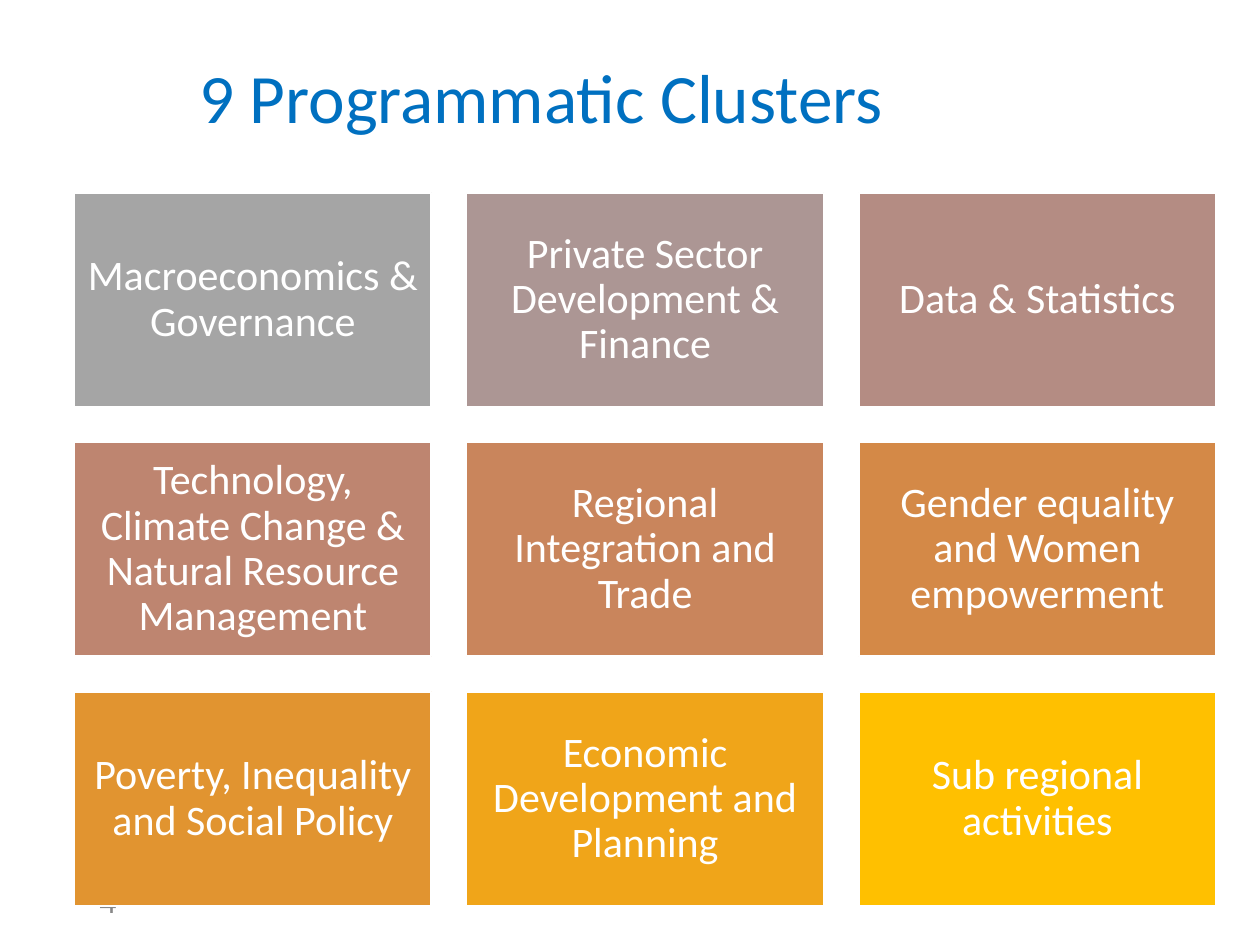
import pptx
import pptx.util
import pptx.dml.color
import pptx.enum.shapes
import pptx.enum.text

Inches, Pt = pptx.util.Inches, pptx.util.Pt
RGBColor = pptx.dml.color.RGBColor
PP_ALIGN, MSO_ANCHOR = pptx.enum.text.PP_ALIGN, pptx.enum.text.MSO_ANCHOR

WHITE = RGBColor(0xFF, 0xFF, 0xFF)
BLUE = RGBColor(0x00, 0x70, 0xC0)
GRAY = RGBColor(0x88, 0x88, 0x88)

CLUSTERS = [
    ("Macroeconomics & Governance", RGBColor(0xA5, 0xA5, 0xA5)),
    ("Private Sector Development & Finance", RGBColor(0xAC, 0x96, 0x94)),
    ("Data & Statistics", RGBColor(0xB4, 0x8C, 0x83)),
    ("Technology, Climate Change & Natural Resource Management",
     RGBColor(0xBE, 0x85, 0x70)),
    ("Regional Integration and Trade", RGBColor(0xC9, 0x85, 0x5C)),
    ("Gender equality and Women empowerment", RGBColor(0xD4, 0x89, 0x47)),
    ("Poverty, Inequality and Social Policy", RGBColor(0xE1, 0x94, 0x30)),
    ("Economic Development and Planning", RGBColor(0xF0, 0xA5, 0x19)),
    ("Sub regional activities", RGBColor(0xFF, 0xC0, 0x00)),
]
COLUMNS = ROWS = 3
GAP = 0.28


def set_text(sp, text, font, size, color, align):
    tf = sp.text_frame
    tf.word_wrap = True
    tf.vertical_anchor = MSO_ANCHOR.MIDDLE
    p = tf.paragraphs[0]
    p.text = text
    p.alignment = align
    p.font.name = font
    p.font.size = Pt(size)
    p.font.color.rgb = color
    return p


def add_label(slide, box, text, font, size, color, align):
    sp = slide.shapes.add_textbox(*map(Inches, box))
    return set_text(sp, text, font, size, color, align)


def add_cluster(slide, box, name, fill):
    sp = slide.shapes.add_shape(
        pptx.enum.shapes.MSO_SHAPE.RECTANGLE, *map(Inches, box))
    sp.shadow.inherit = False
    sp.fill.solid()
    sp.fill.fore_color.rgb = fill
    sp.line.color.rgb = WHITE
    sp.line.width = Pt(1)
    tf = sp.text_frame
    tf.margin_left = tf.margin_right = Inches(0.1)
    tf.margin_top = tf.margin_bottom = Inches(0.1)
    p = set_text(sp, name, "Calibri", 24, WHITE, PP_ALIGN.CENTER)
    p.line_spacing = 0.9


def add_cluster_grid(slide, box):
    """Fill the box row by row with equal rectangles."""
    left, top, width, height = box
    w = (width - (COLUMNS - 1) * GAP) / COLUMNS
    h = (height - (ROWS - 1) * GAP) / ROWS
    for i, (name, fill) in enumerate(CLUSTERS):
        row, col = divmod(i, COLUMNS)
        cell = (left + col * (w + GAP), top + row * (h + GAP), w, h)
        add_cluster(slide, cell, name, fill)


def main():
    prs = pptx.Presentation()
    prs.slide_width, prs.slide_height = Inches(10), Inches(7.5)
    slide = prs.slides.add_slide(prs.slide_layouts[6])
    add_label(slide, (0.69, 6.95, 2.25, 0.4), "4", "Arial", 18, GRAY,
              PP_ALIGN.LEFT)
    add_cluster_grid(slide, (0.59, 1.53, 9.06, 5.66))
    title = add_label(slide, (-0.5, 0.56, 9.59, 0.49),
                      "9 Programmatic Clusters", "Calibri", 39.6, BLUE,
                      PP_ALIGN.CENTER)
    title.line_spacing = 0.9
    prs.save("out.pptx")


if __name__ == "__main__":
    main()
